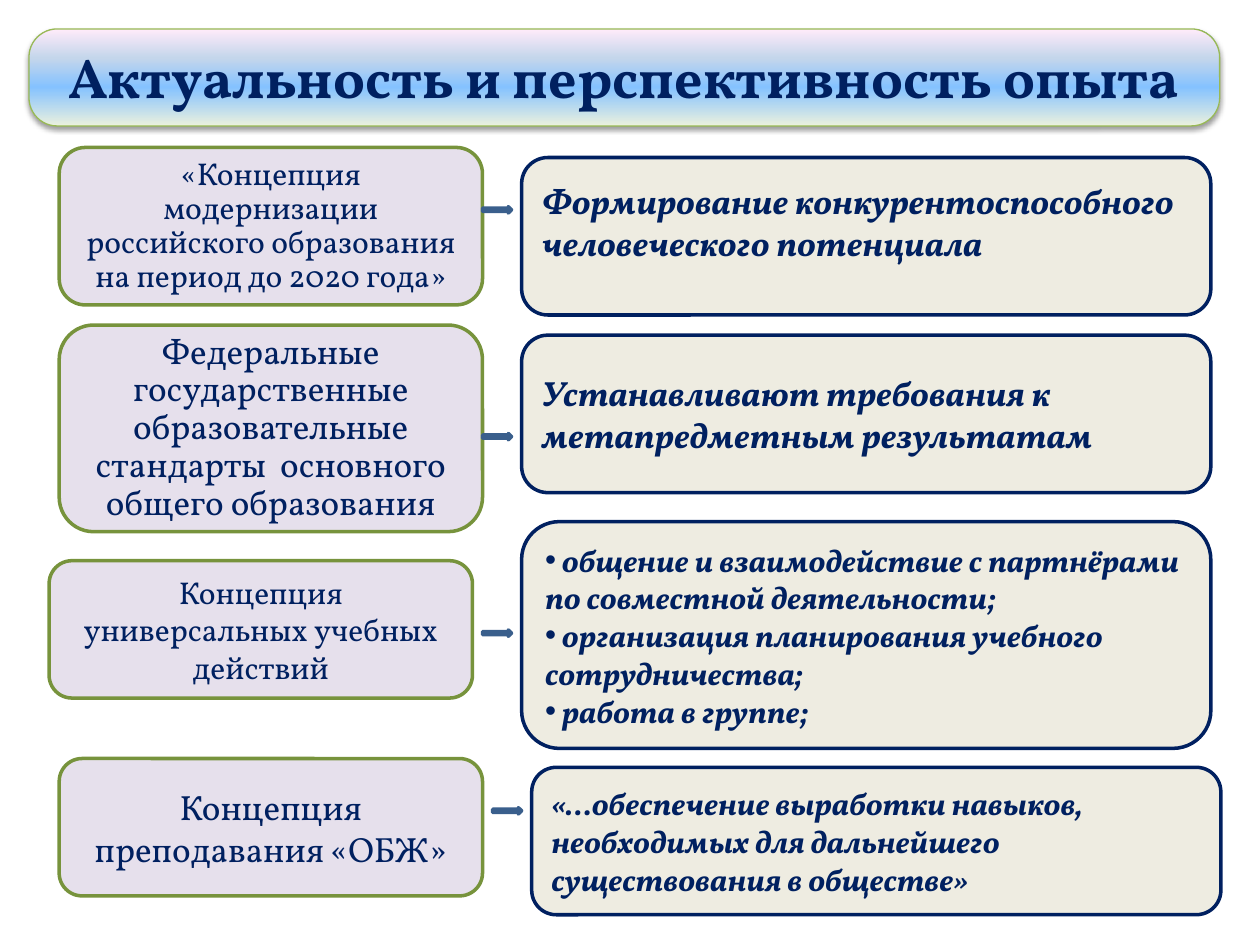
from lxml.etree import SubElement
from pptx import Presentation
from pptx.dml.color import RGBColor
from pptx.enum.shapes import MSO_SHAPE
from pptx.enum.text import MSO_ANCHOR, PP_ALIGN
from pptx.oxml import parse_xml
from pptx.oxml.ns import nsdecls, qn
from pptx.util import Inches, Pt

FONT = "Vollkorn"
NAVY = RGBColor(0x00, 0x20, 0x60)
GREEN = RGBColor(0x77, 0x93, 0x3C)
LIME = RGBColor(0x98, 0xB9, 0x55)
LILAC = RGBColor(0xE6, 0xE0, 0xEC)
CREAM = RGBColor(0xEE, 0xEC, 0xE1)
BLUE = RGBColor(0x4F, 0x81, 0xBD)
STEEL = RGBColor(0x3A, 0x5F, 0x8C)
STOPS = [(0, "EBF1DE"), (40, "85C2FF"), (70, "C4D6EB"), (100, "FFEBFA")]

# Each row: source box, its text, size and line spacing; result box, its lines,
# size and bottom inset; arrow top and fill. Boxes are left, top, width, height.
ROWS = [
    ((0.47, 1.17, 3.36, 1.25),
     "«Концепция модернизации российского образования на период до 2020 года»", 18, 0.9,
     (4.14, 1.25, 5.47, 1.25),
     ["Формирование конкурентоспособного человеческого потенциала"], 20, 0.28,
     1.64, NAVY),
    ((0.47, 2.58, 3.36, 1.64),
     "Федеральные государственные образовательные стандарты  основного общего образования",
     20, 0.9,
     (4.14, 2.66, 5.47, 1.25),
     ["Устанавливают требования к метапредметным результатам"], 20, 0.05,
     3.44, BLUE),
    ((0.39, 4.45, 3.36, 1.09),
     "Концепция универсальных учебных действий", 18, 1.0,
     (4.14, 4.14, 5.47, 1.8),
     [" общение и взаимодействие с партнёрами по совместной деятельности;",
      " организация планирования учебного сотрудничества;",
      " работа в группе;"], 18, 0.05,
     5.0, BLUE),
    ((0.47, 6.02, 3.36, 1.09),
     "Концепция преподавания «ОБЖ»", 20, 1.0,
     (4.22, 6.09, 5.47, 1.17),
     ["«…обеспечение выработки навыков, необходимых для дальнейшего существования в обществе»"],
     18, 0.05,
     6.41, BLUE),
]


def write(shape, lines, size, bold=False, slant=False, align=PP_ALIGN.LEFT,
          anchor=MSO_ANCHOR.MIDDLE, base=0.05, pitch=1.0):
    """Fill a shape with text; several lines become a bulleted list."""
    frame = shape.text_frame
    frame.word_wrap = True
    frame.vertical_anchor = anchor
    frame.margin_bottom = Inches(base)
    for i, line in enumerate(lines):
        para = frame.add_paragraph() if i else frame.paragraphs[0]
        para.alignment = align
        para.line_spacing = pitch
        run = para.add_run()
        run.text = line
        font = run.font
        font.name, font.size = FONT, Pt(size)
        font.bold, font.italic = bold, slant
        font.color.rgb = NAVY
        if len(lines) > 1:
            props = para._p.get_or_add_pPr()
            SubElement(props, qn("a:buFont")).set("typeface", "Arial")
            SubElement(props, qn("a:buChar")).set("char", "•")


def draw(slide, kind, box, fill, line):
    shape = slide.shapes.add_shape(kind, *map(Inches, box))
    shape.shadow.inherit = False
    shape.fill.solid()
    shape.fill.fore_color.rgb = fill
    shape.line.color.rgb = line
    shape.line.width = Pt(2)
    return shape


def banner(slide, box, text):
    # Rounded panel with a gradient fill and a soft shadow
    panel = slide.shapes.add_shape(MSO_SHAPE.ROUNDED_RECTANGLE, *map(Inches, box))
    panel.adjustments[0] = 0.29
    props = panel._element.spPr
    space = nsdecls("a")
    stops = "".join(f'<a:gs pos="{pos * 1000}"><a:srgbClr val="{tone}"/></a:gs>'
                    for pos, tone in STOPS)
    props.append(parse_xml(
        f'<a:gradFill {space} rotWithShape="1"><a:gsLst>{stops}</a:gsLst>'
        '<a:lin ang="16200000" scaled="0"/></a:gradFill>'))
    panel.line.color.rgb = LIME
    panel.line.width = Pt(0.75)
    props.append(parse_xml(
        f'<a:effectLst {space}><a:outerShdw blurRad="{Pt(3.1)}" dist="{Pt(1.6)}" '
        'dir="5400000" rotWithShape="0"><a:srgbClr val="000000">'
        '<a:alpha val="38000"/></a:srgbClr></a:outerShdw></a:effectLst>'))
    # Title, brought in front of the panel and clear of its rounded edge
    left, top, width, height = box
    edge = 0.06
    title = slide.shapes.title
    title.left, title.top = Inches(left), Inches(top + edge)
    title.width, title.height = Inches(width), Inches(height - edge)
    panel._element.addnext(title._element)
    write(title, [text], 32, bold=True, align=PP_ALIGN.CENTER, anchor=MSO_ANCHOR.TOP)


def link(slide, left, text, size, pitch, right, lines, big, base, top, tone):
    # Source document
    card = draw(slide, MSO_SHAPE.ROUNDED_RECTANGLE, left, LILAC, GREEN)
    write(card, [text], size, align=PP_ALIGN.CENTER, pitch=pitch)
    # Arrow just before the result
    draw(slide, MSO_SHAPE.RIGHT_ARROW, (right[0] - 0.31, top, 0.23, 0.05), tone, STEEL)
    # Result
    card = draw(slide, MSO_SHAPE.ROUNDED_RECTANGLE, right, CREAM, NAVY)
    write(card, lines, big, bold=True, slant=True, base=base)


def main():
    deck = Presentation()
    deck.slide_width, deck.slide_height = Inches(10), Inches(7.5)
    slide = deck.slides.add_slide(deck.slide_layouts[5])
    banner(slide, (0.23, 0.23, 9.45, 0.77), "Актуальность и перспективность опыта")
    for row in ROWS:
        link(slide, *row)
    deck.save("out.pptx")


if __name__ == "__main__":
    main()
